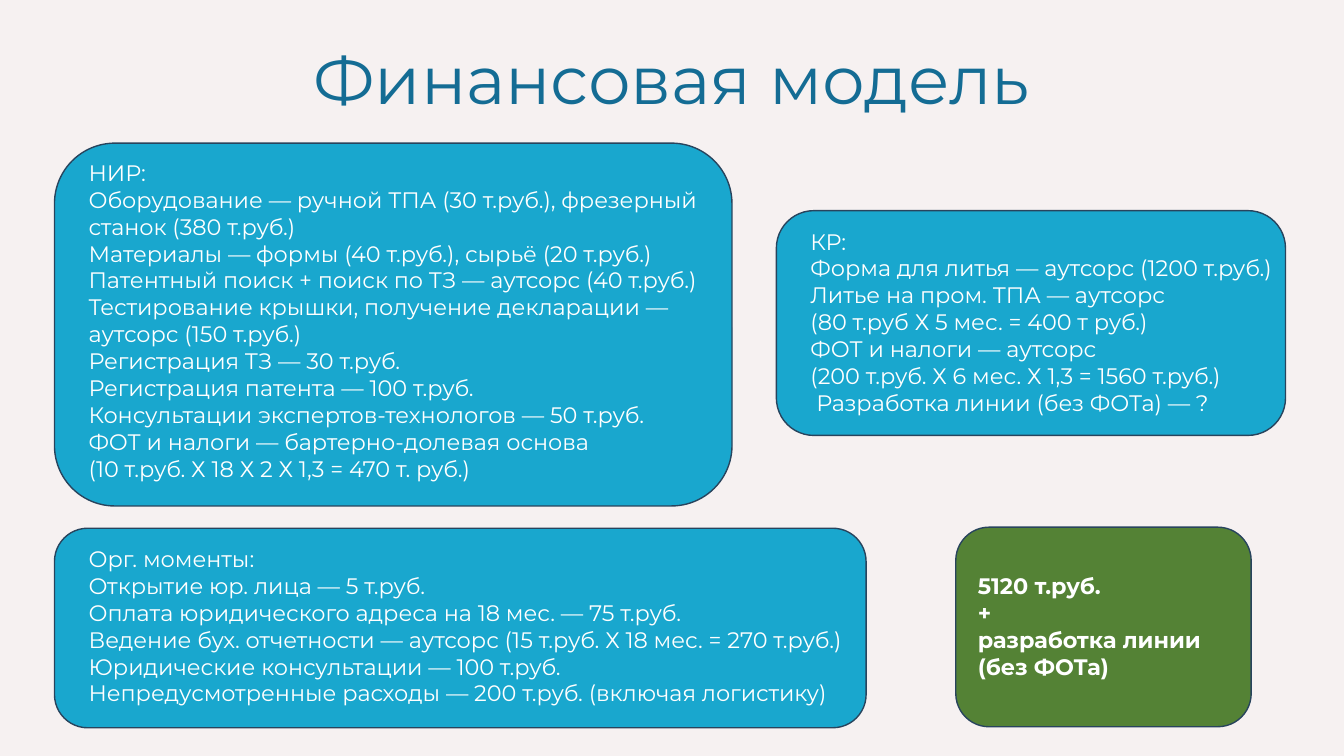
import dataclasses

import pptx
import pptx.dml.color
import pptx.enum.shapes
import pptx.enum.text
import pptx.util

Inches = pptx.util.Inches
COLORS = {
    "background": "F6F1F1",
    "title": "146C94",
    "cost": "19A7CE",
    "total": "548235",
    "border": "28445D",
    "text": "FFFFFF",
}
FONT = "Montserrat"


@dataclasses.dataclass(frozen=True)
class Card:
    """A rounded panel and the text laid over it, in inches."""

    panel: tuple[float, float, float, float]
    label: tuple[float, float, float, float]
    paragraphs: tuple[str, ...]
    fill: str = "cost"
    bold: bool = False


CARDS = (
    Card(
        (0.54, 1.42, 6.72, 3.6),
        (0.78, 1.53, 6.5, 3.33),
        (
            "НИР:\n"
            "Оборудование — ручной ТПА (30 т.руб.), фрезерный станок (380 т.руб.)\n"
            "Материалы — формы (40 т.руб.), сырьё (20 т.руб.) "
            "Патентный поиск + поиск по ТЗ — аутсорс (40 т.руб.) "
            "Тестирование крышки, получение декларации — аутсорс (150 т.руб.)\n"
            "Регистрация ТЗ — 30 т.руб.\n"
            "Регистрация патента — 100 т.руб.\n"
            "Консультации экспертов-технологов — 50 т.руб.\n"
            "ФОТ и налоги — бартерно-долевая основа\n"
            "(10 т.руб. Х 18 Х 2 Х 1,3 = 470 т. руб.)",
        ),
    ),
    Card(
        (7.7, 2.09, 5.05, 2.23),
        (7.94, 2.21, 6.67, 1.99),
        (
            "КР:\n"
            "Форма для литья — аутсорс (1200 т.руб.)\n"
            "Литье на пром. ТПА — аутсорс\n"
            "(80 т.руб Х 5 мес. = 400 т руб.)\n"
            "ФОТ и налоги — аутсорс\n"
            "(200 т.руб. Х 6 мес. Х 1,3 = 1560 т.руб.)\n"
            " Разработка линии (без ФОТа) — ?",
        ),
    ),
    Card(
        (0.54, 5.24, 8.05, 1.98),
        (0.78, 5.36, 8.58, 1.72),
        (
            "Орг. моменты:\n"
            "Открытие юр. лица — 5 т.руб.\n"
            "Оплата юридического адреса на 18 мес. — 75 т.руб.\n"
            "Ведение бух. отчетности — аутсорс (15 т.руб. Х 18 мес. = 270 т.руб.)\n"
            "Юридические консультации — 100 т.руб.",
            "Непредусмотренные расходы — 200 т.руб. (включая логистику)",
        ),
    ),
    Card(
        (9.48, 5.23, 2.93, 1.98),
        (9.6, 5.63, 7.3, 1.18),
        ("5120 т.руб.\n+\nразработка линии\n(без ФОТа)",),
        fill="total",
        bold=True,
    ),
)


def rgb(name: str) -> pptx.dml.color.RGBColor:
    """Return the named colour."""
    return pptx.dml.color.RGBColor.from_string(COLORS[name])


def write(
    tf,
    *paragraphs: str,
    size: float = 16,
    color: str = "text",
    bold: bool = False,
    align=pptx.enum.text.PP_ALIGN.LEFT,
    spacing: float = 1.0,
) -> None:
    """Fill a text frame with formatted paragraphs."""
    tf.word_wrap = True
    for i, text in enumerate(paragraphs):
        p = tf.add_paragraph() if i else tf.paragraphs[0]
        p.text = text
        p.alignment = align
        p.line_spacing = spacing
        for r in p.runs:
            r.font.name = FONT
            r.font.size = pptx.util.Pt(size)
            r.font.bold = bold
            r.font.color.rgb = rgb(color)


def add_title(s, text: str) -> None:
    """Place and format the slide title."""
    sp = s.shapes.title
    sp.left, sp.top, sp.width, sp.height = map(Inches, (2.39, 0.42, 8.54, 0.81))
    tf = sp.text_frame
    tf.vertical_anchor = pptx.enum.text.MSO_ANCHOR.MIDDLE
    tf.auto_size = pptx.enum.text.MSO_AUTO_SIZE.NONE
    write(tf, text, size=48, color="title", spacing=0.9,
          align=pptx.enum.text.PP_ALIGN.CENTER)


def add_card(s, card: Card) -> None:
    """Draw a panel with its text."""
    sp = s.shapes.add_shape(
        pptx.enum.shapes.MSO_SHAPE.ROUNDED_RECTANGLE, *map(Inches, card.panel)
    )
    sp.shadow.inherit = False
    sp.fill.solid()
    sp.fill.fore_color.rgb = rgb(card.fill)
    sp.line.color.rgb = rgb("border")
    sp.line.width = pptx.util.Pt(1)
    tf = s.shapes.add_textbox(*map(Inches, card.label)).text_frame
    tf.auto_size = pptx.enum.text.MSO_AUTO_SIZE.SHAPE_TO_FIT_TEXT
    write(tf, *card.paragraphs, bold=card.bold)


def main() -> None:
    """Build the financial model slide."""
    prs = pptx.Presentation()
    prs.slide_width, prs.slide_height = Inches(13.33), Inches(7.5)
    s = prs.slides.add_slide(prs.slide_layouts.get_by_name("Title Only"))
    s.background.fill.solid()
    s.background.fill.fore_color.rgb = rgb("background")
    add_title(s, "Финансовая модель")
    for card in CARDS:
        add_card(s, card)
    prs.save("out.pptx")


if __name__ == "__main__":
    main()
